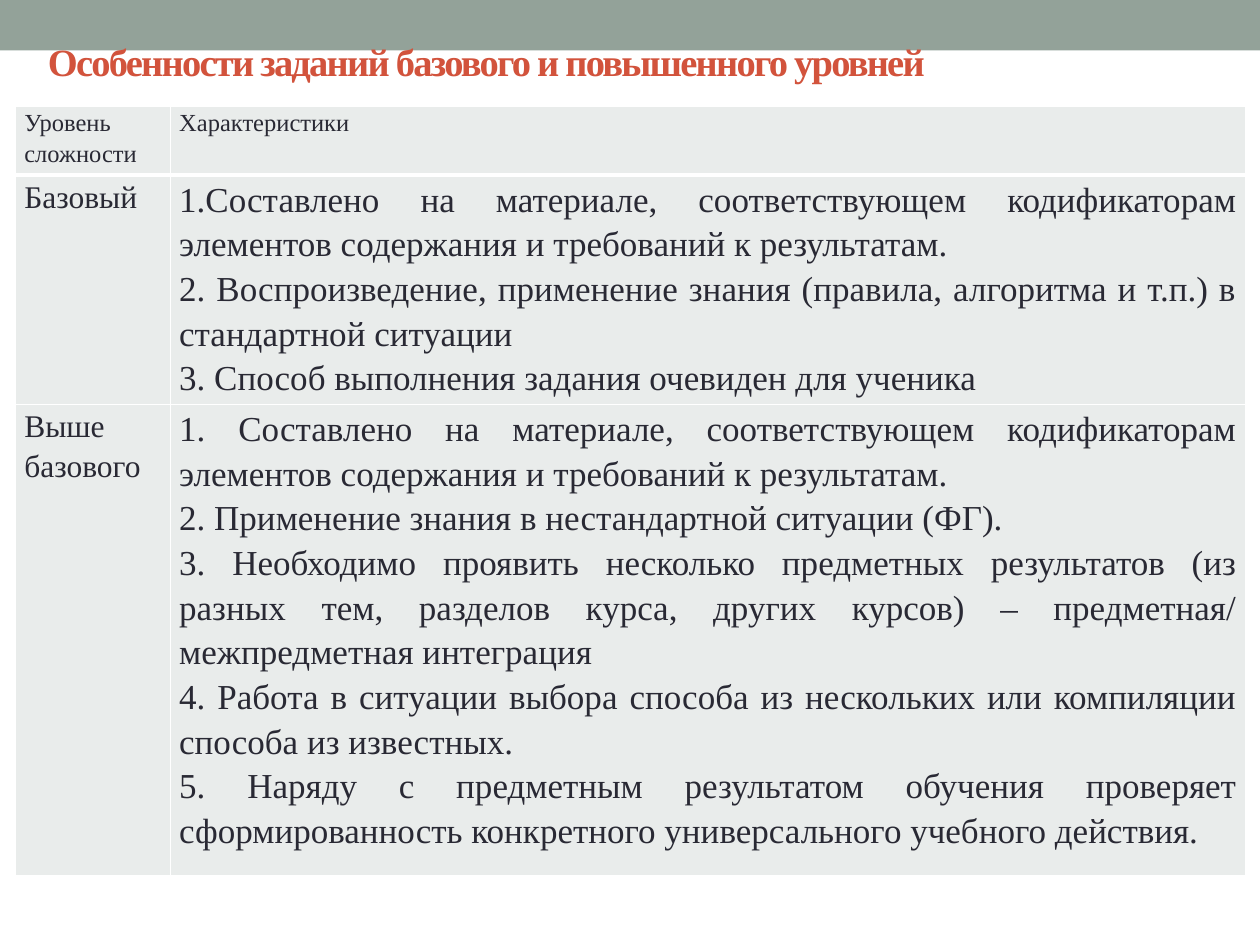
"""Build a slide with a table comparing basic and advanced task levels."""
import pptx
import pptx.chart
import pptx.dml.color
import pptx.enum.text
import pptx.oxml
import pptx.oxml.ns
import pptx.util

Pt = pptx.util.Pt
ALIGN = pptx.enum.text.PP_ALIGN
ANCHOR = pptx.enum.text.MSO_ANCHOR


def color(text):
    return pptx.dml.color.RGBColor.from_string(text)


def write(para, text, size, ink, bold=False):
    run = para.add_run()
    run.text = text
    run.font.name = "Times New Roman"
    run.font.size = Pt(size)
    run.font.bold = bold
    run.font.color.rgb = color(ink)
    return run


deck = pptx.Presentation()
deck.slide_width = Pt(720)
deck.slide_height = Pt(540)
slide = deck.slides.add_slide(deck.slide_layouts[5])

title = slide.shapes.title
title.left, title.top = Pt(20.2), Pt(15.1)
title.width, title.height = Pt(686.2), Pt(39.6)
frame = title.text_frame
frame.word_wrap = True
frame.auto_size = pptx.enum.text.MSO_AUTO_SIZE.NONE
frame.vertical_anchor = ANCHOR.MIDDLE
para = frame.paragraphs[0]
para.alignment = ALIGN.LEFT
run = write(para, "Особенности заданий базового и повышенного уровней", 22, "D2533C", True)
run.font.language_id = pptx.enum.lang.MSO_LANGUAGE_ID.RUSSIAN if hasattr(pptx.enum, "lang") else None
run.font.fill.solid()
run.font.color.rgb = color("D2533C")
run.font._element.set("spc", "-100")

band = slide.shapes.add_shape(pptx.enum.shapes.MSO_SHAPE.RECTANGLE, 0, 0, Pt(720), Pt(28.8))
band.shadow.inherit = False
band.fill.solid()
band.fill.fore_color.rgb = color("93A299")
band.line.fill.background()
title.element.addprevious(band.element)

rows = [
    (39.6, 14, 14, ["Уровень сложности"], ["Характеристики"]),
    (131, 18, 20, ["Базовый"], [
        "1.Составлено на материале, соответствующем кодификаторам элементов содержания и требований к результатам.",
        "2. Воспроизведение, применение знания (правила, алгоритма и т.п.) в стандартной ситуации",
        "3. Способ выполнения задания очевиден для ученика",
    ]),
    (269.3, 18, 20, ["Выше базового"], [
        "1. Составлено на материале, соответствующем кодификаторам элементов содержания и требований к результатам.",
        "2. Применение знания в нестандартной ситуации (ФГ).",
        "3. Необходимо проявить несколько предметных результатов (из разных тем, разделов курса, "
        "других курсов) – предметная/ межпредметная интеграция",
        "4. Работа в ситуации выбора способа из нескольких или компиляции способа из известных.",
        "5. Наряду с предметным результатом обучения проверяет сформированность конкретного "
        "универсального учебного действия.",
    ]),
]
total = sum(row[0] for row in rows)
table = slide.shapes.add_table(len(rows), 2, Pt(8.9), Pt(60.5), Pt(702.7), Pt(total)).table
table.first_row = False
table.horz_banding = False
table.columns[0].width = Pt(88.5)
table.columns[1].width = Pt(614.2)

for r, (height, small, large, label, notes) in enumerate(rows):
    table.rows[r].height = Pt(height)
    for c, (size, lines) in enumerate([(small, label), (large, notes)]):
        cell = table.cell(r, c)
        cell.margin_left = cell.margin_right = Pt(5)
        cell.margin_top = cell.margin_bottom = 0
        cell.vertical_anchor = ANCHOR.TOP
        props = cell._tc.get_or_add_tcPr()
        for side in "LRTB":
            thick = (r, side) in [(0, "B"), (1, "T")]
            props.append(pptx.oxml.parse_xml(
                f'<a:ln{side} {pptx.oxml.ns.nsdecls("a")} w="{Pt(3 if thick else 1)}">'
                f'<a:solidFill><a:srgbClr val="FFFFFF"/></a:solidFill></a:ln{side}>'))
        cell.fill.solid()
        cell.fill.fore_color.rgb = color("E9ECEB")
        frame = cell.text_frame
        for i, line in enumerate(lines):
            para = frame.add_paragraph() if i else frame.paragraphs[0]
            para.line_spacing = 1.15
            para.alignment = ALIGN.JUSTIFY if r and c else ALIGN.LEFT
            write(para, line, size, "292934")

deck.save("out.pptx")
